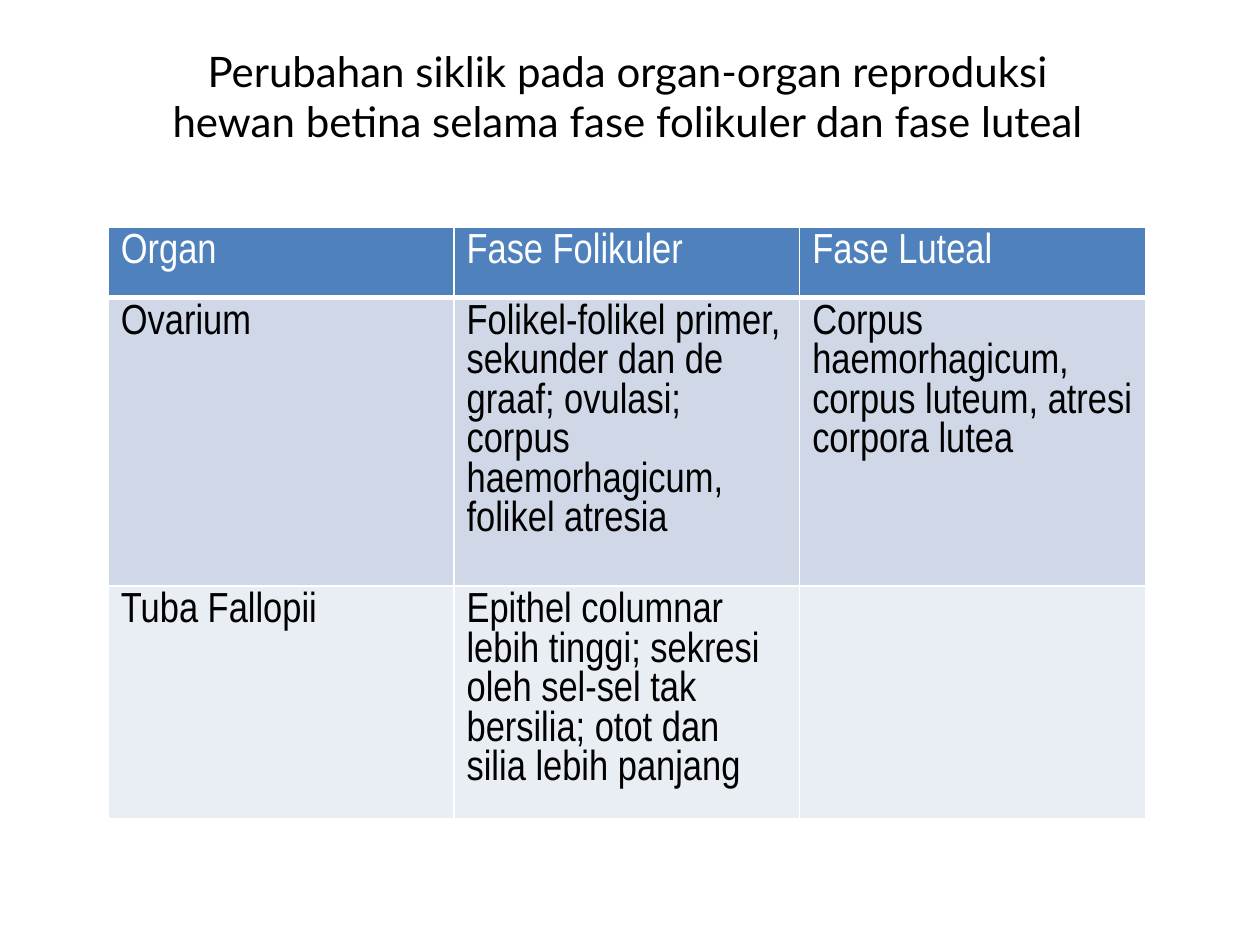
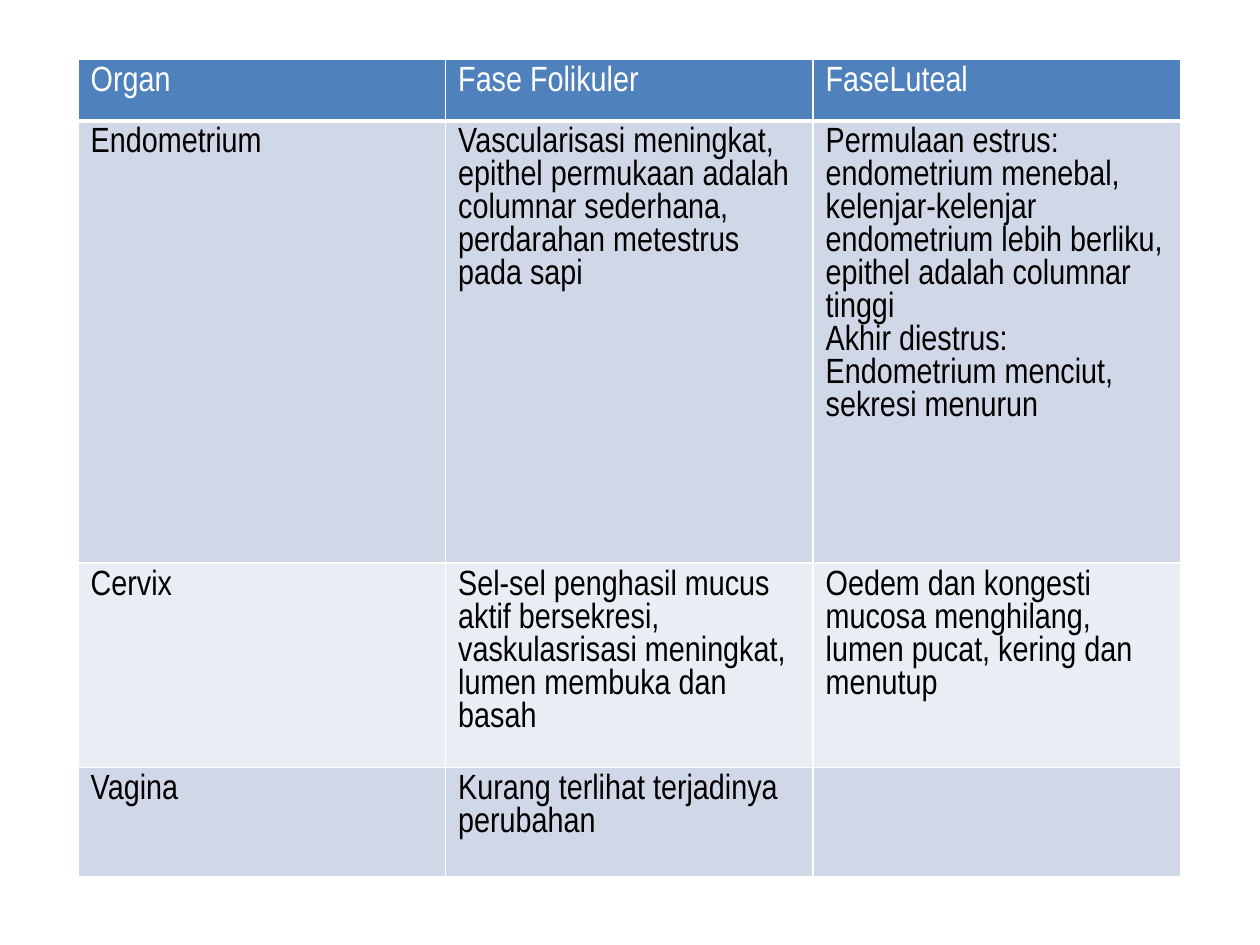
from dataclasses import dataclass

from lxml import etree
from pptx import Presentation
from pptx.dml.color import RGBColor
from pptx.enum.text import MSO_ANCHOR, PP_ALIGN
from pptx.oxml.ns import qn
from pptx.util import Inches, Pt

CENTER, LEFT = PP_ALIGN.CENTER, PP_ALIGN.LEFT
MIDDLE = MSO_ANCHOR.MIDDLE


@dataclass(frozen=True)
class Theme:
    header: str = "4F81BD"
    bands: tuple = ("D0D8E8", "E9EDF4")
    white: str = "FFFFFF"
    black: str = "000000"
    title_font: str = "Lato"
    table_font: str = "Arial Narrow"
    title_size: int = 24
    rule: int = 1
    header_rule: int = 3


theme = Theme()


def write(tf, text, font=theme.table_font, size=24, color=theme.black, align=LEFT):
    """Fill a text frame, one paragraph per line of text."""
    for i, line in enumerate(text.split("\n")):
        p = tf.paragraphs[0] if i == 0 else tf.add_paragraph()
        p.alignment = align
        p.font.size = Pt(size)
        if not line:
            continue
        r = p.add_run()
        r.text = line
        r.font.name = font
        r.font.size = Pt(size)
        r.font.bold = False
        r.font.color.rgb = RGBColor.from_string(color)


def add_borders(cell, bottom):
    """Draw white rules on the four sides of a cell."""
    tcPr = cell._tc.get_or_add_tcPr()
    for side in "LRTB":
        width = bottom if side == "B" else theme.rule
        ln = etree.SubElement(tcPr, qn(f"a:ln{side}"), w=str(Pt(width)))
        fill = etree.SubElement(ln, qn("a:solidFill"))
        etree.SubElement(fill, qn("a:srgbClr"), val=theme.white)


prs = Presentation()
prs.slide_width, prs.slide_height = Inches(10), Inches(7.5)
title_only, blank = prs.slide_layouts[5], prs.slide_layouts[6]

# Content of each slide: title, table place, type size, row heights and cells
slides = [
    dict(
        title="Perubahan siklik pada organ-organ reproduksi hewan betina "
              "selama fase folikuler dan fase luteal",
        left=0.86, top=1.8, width=8.23, size=24,
        heights=[0.56, 2.29, 1.85],
        rows=[
            ("Organ", "Fase Folikuler", "Fase Luteal"),
            ("Ovarium",
             "Folikel-folikel primer, sekunder dan de graaf; ovulasi; "
             "corpus haemorhagicum, folikel atresia",
             "Corpus haemorhagicum, corpus luteum, atresi corpora lutea"),
            ("Tuba Fallopii",
             "Epithel columnar lebih tinggi; sekresi oleh sel-sel tak bersilia; "
             "otot dan silia lebih panjang",
             ""),
        ],
    ),
    dict(
        title=None,
        left=0.62, top=0.47, width=8.75, size=20,
        heights=[0.49, 3.51, 1.62, 0.87],
        rows=[
            ("Organ", "Fase Folikuler", "FaseLuteal"),
            ("Endometrium",
             "Vascularisasi meningkat, epithel permukaan adalah columnar "
             "sederhana, perdarahan metestrus pada sapi",
             "Permulaan estrus: endometrium menebal, kelenjar-kelenjar "
             "endometrium lebih berliku, epithel adalah columnar tinggi\n"
             "Akhir diestrus:\n"
             "Endometrium menciut, sekresi menurun"),
            ("Cervix",
             "Sel-sel penghasil mucus aktif bersekresi, vaskulasrisasi "
             "meningkat, lumen membuka dan basah",
             "Oedem dan kongesti mucosa menghilang, lumen pucat, kering "
             "dan menutup"),
            ("Vagina", "Kurang terlihat terjadinya perubahan", ""),
        ],
    ),
]

for content in slides:
    s = prs.slides.add_slide(title_only if content["title"] else blank)

    # Title
    if content["title"]:
        sp = s.shapes.title
        sp.left, sp.top = Inches(1.02), Inches(0.31)
        sp.width, sp.height = Inches(7.92), Inches(0.9)
        sp.text_frame.vertical_anchor = MIDDLE
        write(sp.text_frame, content["title"], font=theme.title_font,
              size=theme.title_size, align=CENTER)

    # Table with equal columns
    rows, heights = content["rows"], content["heights"]
    table = s.shapes.add_table(
        len(rows), len(rows[0]), Inches(content["left"]), Inches(content["top"]),
        Inches(content["width"]), Inches(sum(heights))).table
    for column in table.columns:
        column.width = Inches(content["width"] / len(rows[0]))

    # Header row, then alternating bands
    for i, row in enumerate(rows):
        table.rows[i].height = Inches(heights[i])
        is_header = i == 0
        fill = theme.header if is_header else theme.bands[(i - 1) % 2]
        for j, text in enumerate(row):
            cell = table.cell(i, j)
            add_borders(cell, theme.header_rule if is_header else theme.rule)
            cell.fill.solid()
            cell.fill.fore_color.rgb = RGBColor.from_string(fill)
            write(cell.text_frame, text, size=content["size"],
                  color=theme.white if is_header else theme.black)

prs.save("out.pptx")
